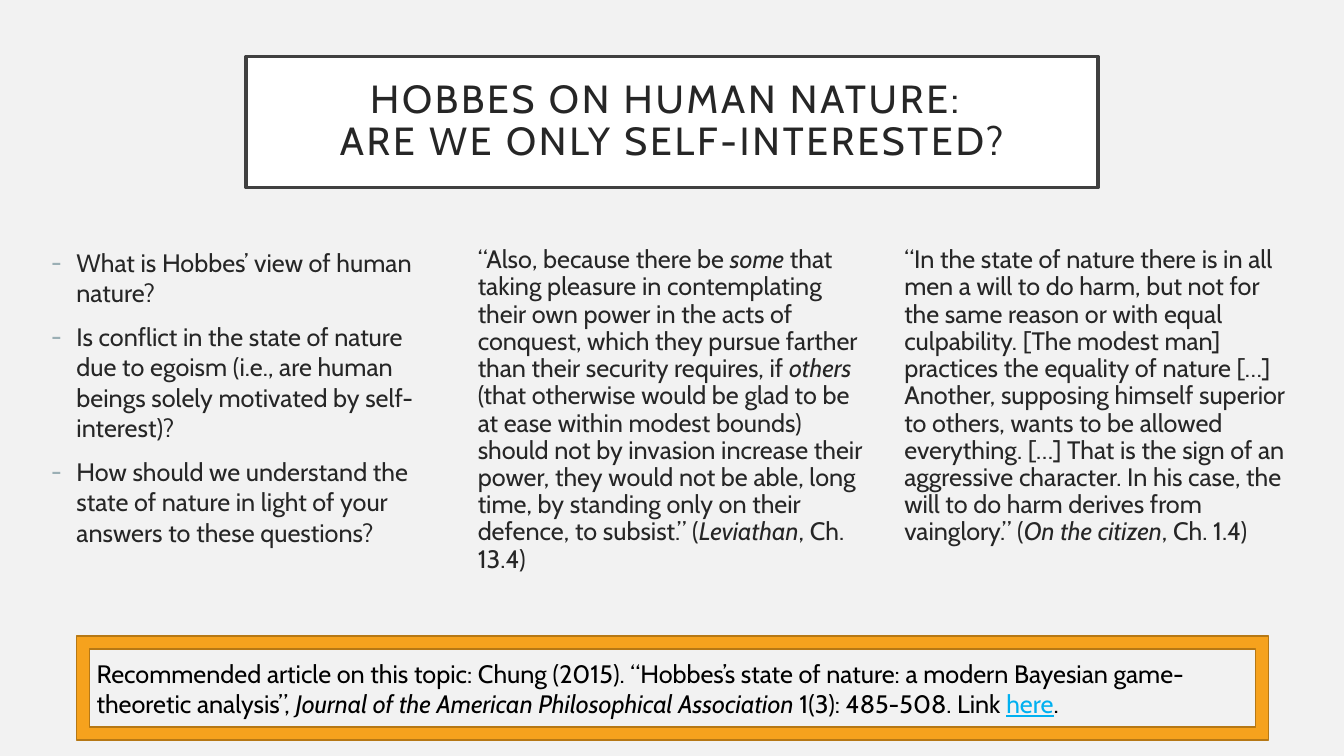
"""Build a slide on Hobbes and human nature with questions, two quotations and a reading tip."""
from copy import deepcopy

from lxml.etree import SubElement
from pptx import Presentation
from pptx.dml.color import RGBColor
from pptx.enum.shapes import MSO_SHAPE
from pptx.enum.text import MSO_ANCHOR, MSO_AUTO_SIZE, PP_ALIGN
from pptx.oxml.ns import qn
from pptx.util import Inches, Pt

FONT = "Cabin"
INK, BLACK, LINK = "262626", "000000", "00B0F0"

TITLE = ["HOBBES ON HUMAN NATURE: ", "ARE WE ONLY SELF-INTERESTED?"]
QUESTIONS = [
    "What is Hobbes’ view of human nature?",
    "Is conflict in the state of nature due to egoism (i.e., are human beings solely "
    "motivated by self-interest)?",
    "How should we understand the state of nature in light of your answers to these questions?",
]
QUOTES = [
    [
        ("“Also, because there be ", ""),
        ("some", "italic"),
        (" that taking pleasure in contemplating their own power in the acts of conquest, "
         "which they pursue farther than their security requires, if ", ""),
        ("others", "italic"),
        (" (that otherwise would be glad to be at ease within modest bounds) should not by "
         "invasion increase their power, they would not be able, long time, by standing only "
         "on their defence, to subsist.” (", ""),
        ("Leviathan", "italic"),
        (", Ch. 13.4)", ""),
    ],
    [
        ("“In the state of nature there is in all men a will to do harm, but not for the same "
         "reason or with equal culpability. [The modest man] practices the equality of nature "
         "[…] Another, supposing himself superior to others, wants to be allowed everything. "
         "[…] That is the sign of an aggressive character. In his case, the will to do harm "
         "derives from vainglory.” (", ""),
        ("On the citizen", "italic"),
        (", Ch. 1.4)", ""),
    ],
]
READING = [
    ("Recommended article on this topic: Chung (2015). “Hobbes’s state of nature: a modern "
     "Bayesian game-theoretic analysis”, ", ""),
    ("Journal of the American Philosophical Association", "italic"),
    (" 1(3): 485-508. Link ", ""),
    ("here", "link"),
    (".", ""),
]

COLUMN_LEFT, COLUMN_STEP = 0.41, 4.23
COLUMN_TOP, COLUMN_WIDTH, COLUMN_HEIGHT = 2.4, 4.05, 3.39


def rgb(value):
    return RGBColor.from_string(value)


def add_run(p, text, style="", color=INK, size=18):
    r = p.add_run()
    r.text = text
    r.font.name, r.font.size = FONT, Pt(size)
    r.font.color.rgb = rgb(LINK if style == "link" else color)
    if style == "italic":
        r.font.italic = True
    if style == "link":
        r.font.underline = True
    return r


def add_text(slide, left, top, width, height):
    box = slide.shapes.add_textbox(Inches(left), Inches(top), Inches(width), Inches(height))
    box.text_frame.word_wrap = True
    return box.text_frame


def add_dash(p):
    ppr = p._p.get_or_add_pPr()
    ppr.set("marL", str(Inches(0.25)))
    ppr.set("indent", str(Inches(-0.25)))
    SubElement(SubElement(ppr, qn("a:buClr")), qn("a:srgbClr"), val="9BAFB5")
    SubElement(ppr, qn("a:buFont"), typeface=FONT)
    SubElement(ppr, qn("a:buChar"), char="-")


def outline(sp, fill, line, width):
    sp.fill.solid()
    sp.fill.fore_color.rgb = rgb(fill)
    sp.line.color.rgb = rgb(line)
    sp.line.width = Pt(width)


def format_title(title):
    title.left, title.top = Inches(2.44), Inches(0.56)
    title.width, title.height = Inches(8.45), Inches(1.3)
    outline(title, "FFFFFF", "404040", 2.5)
    tf = title.text_frame
    tf.auto_size, tf.word_wrap = MSO_AUTO_SIZE.NONE, True
    tf.vertical_anchor = MSO_ANCHOR.MIDDLE
    tf.margin_left = tf.margin_right = tf.margin_top = tf.margin_bottom = Inches(0.2)
    p = tf.paragraphs[0]
    p.alignment, p.line_spacing = PP_ALIGN.CENTER, 0.9
    for i, text in enumerate(TITLE):
        if i:
            p.add_line_break()
        r = add_run(p, text, size=28)
        r.font._element.set("spc", "200")
    for br in p._p.findall(qn("a:br")):
        br.append(deepcopy(r.font._element))


def main():
    prs = Presentation()
    prs.slide_width, prs.slide_height = Inches(13.33), Inches(7.5)
    s = prs.slides.add_slide(prs.slide_layouts[5])
    s.background.fill.solid()
    s.background.fill.fore_color.rgb = rgb("F2F2F2")
    format_title(s.shapes.title)

    columns = [
        add_text(s, COLUMN_LEFT + i * COLUMN_STEP, COLUMN_TOP, COLUMN_WIDTH, COLUMN_HEIGHT)
        for i in range(1 + len(QUOTES))
    ]
    for i, question in enumerate(QUESTIONS):
        p = columns[0].add_paragraph() if i else columns[0].paragraphs[0]
        p.space_before = Pt(10)
        add_dash(p)
        add_run(p, question)
    for tf, quote in zip(columns[1:], QUOTES):
        p = tf.paragraphs[0]
        p.line_spacing, p.space_before = 0.9, Pt(10)
        for text, style in quote:
            add_run(p, text, style)

    tf = add_text(s, 0.86, 6.48, 11.54, 0.71)
    tf.auto_size = MSO_AUTO_SIZE.SHAPE_TO_FIT_TEXT
    for text, style in READING:
        add_run(tf.paragraphs[0], text, style, BLACK)

    frame = s.shapes.add_shape(
        MSO_SHAPE.FRAME, Inches(0.76), Inches(6.31), Inches(11.82), Inches(1.03))
    frame.shadow.inherit = False
    outline(frame, "F6A21D", "B67815", 1)

    prs.save("out.pptx")


if __name__ == "__main__":
    main()
